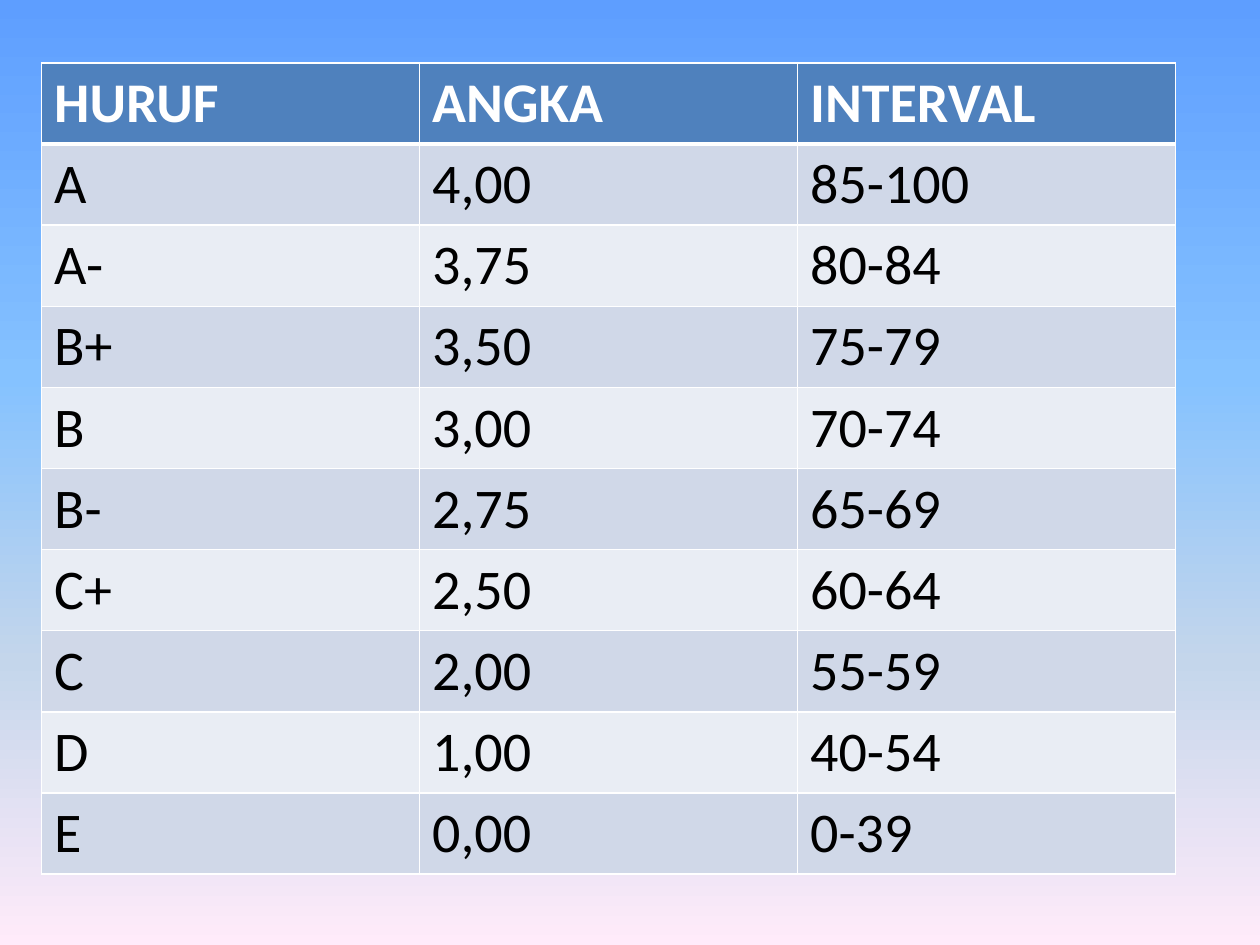
from lxml import etree
from pptx import Presentation
from pptx.dml.color import RGBColor
from pptx.oxml.ns import qn
from pptx.util import Inches, Pt

FONT = "Calibri"
WHITE, BLACK = "FFFFFF", "000000"
HEADER_FILL = "4F81BD"
BAND_FILLS = ("D0D8E8", "E9EDF4")
SKY_STOPS = ((0, "5E9EFF"), (40, "85C2FF"), (70, "C4D6EB"), (100, "FFEBFA"))
GRADES = (
    ("HURUF", "ANGKA", "INTERVAL"),
    ("A", "4,00", "85-100"),
    ("A-", "3,75", "80-84"),
    ("B+", "3,50", "75-79"),
    ("B", "3,00", "70-74"),
    ("B-", "2,75", "65-69"),
    ("C+", "2,50", "60-64"),
    ("C", "2,00", "55-59"),
    ("D", "1,00", "40-54"),
    ("E", "0,00", "0-39"),
)


def rgb(value):
    return RGBColor.from_string(value)


def write_text(frame, text, size=32, color=BLACK, bold=False):
    span = frame.paragraphs[0].add_run()
    span.text = text
    span.font.name = FONT
    span.font.size = Pt(size)
    span.font.bold = bold
    span.font.color.rgb = rgb(color)


def set_borders(cell, color=WHITE, left=1, right=1, top=1, bottom=1):
    properties = cell._tc.get_or_add_tcPr()
    widths = {"L": left, "R": right, "T": top, "B": bottom}
    # Border lines must precede the fill
    for index, (side, width) in enumerate(widths.items()):
        line = etree.Element(qn(f"a:ln{side}"), w=str(Pt(width)))
        solid = etree.SubElement(line, qn("a:solidFill"))
        etree.SubElement(solid, qn("a:srgbClr"), val=color)
        properties.insert(index, line)


def paint_background(page):
    fill = page.background.fill
    fill.gradient()
    fill.gradient_angle = 270  # counter-clockwise: top to bottom
    stops = next(page.element.iter(qn("a:gsLst")))
    for stop in list(stops):
        stops.remove(stop)
    for position, color in SKY_STOPS:
        stop = etree.SubElement(stops, qn("a:gs"), pos=str(position * 1000))
        etree.SubElement(stop, qn("a:srgbClr"), val=color)


def add_grade_table(page, left, top, width, height):
    row_count, column_count = len(GRADES), len(GRADES[0])
    table = page.shapes.add_table(
        row_count, column_count, left, top, width, height).table
    for row, texts in enumerate(GRADES):
        header = row == 0
        for column, text in enumerate(texts):
            cell = table.cell(row, column)
            cell.fill.solid()
            cell.fill.fore_color.rgb = rgb(
                HEADER_FILL if header else BAND_FILLS[(row - 1) % 2])
            # A thick rule separates the header from the first grade
            set_borders(cell, top=3 if row == 1 else 1,
                        bottom=3 if header else 1)
            write_text(cell.text_frame, text, bold=header,
                       color=WHITE if header else BLACK)


def main():
    deck = Presentation()
    deck.slide_width, deck.slide_height = Inches(10), Inches(7.5)
    page = deck.slides.add_slide(deck.slide_layouts[6])
    paint_background(page)
    add_grade_table(page, Inches(0.33), Inches(0.5), Inches(9), Inches(6.4))
    deck.save("out.pptx")


if __name__ == "__main__":
    main()
